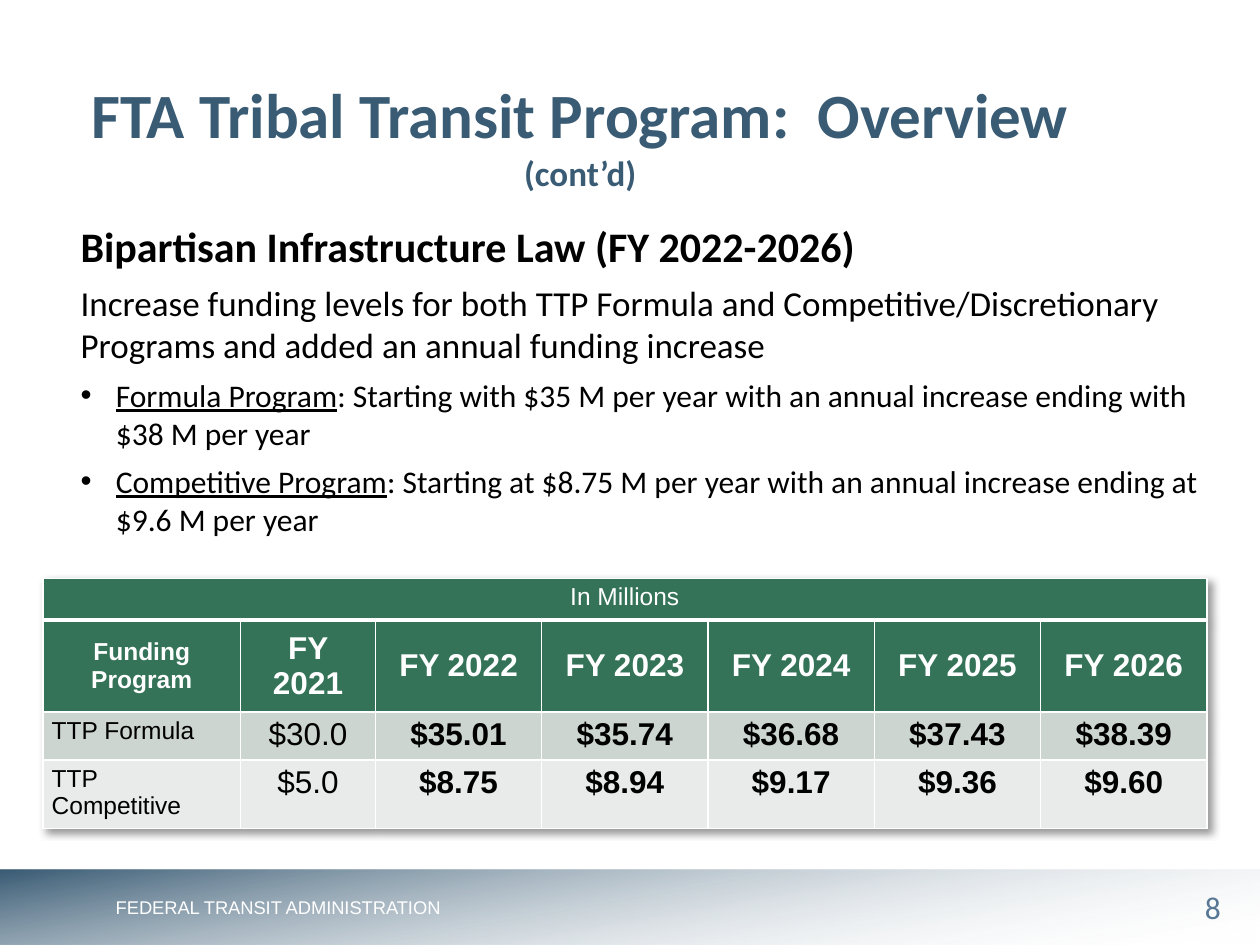
from lxml import etree
from pptx import Presentation
from pptx import util as u
from pptx.dml.color import RGBColor
from pptx.enum import shapes, text
from pptx.oxml import ns

COLORS = {
    "navy": "395B74", "number": "577795", "white": "FFFFFF", "black": "000000",
    "green": "347358", "formula": "CDD5D1", "competitive": "E8EBEA",
}
LEFT, CENTER = text.PP_ALIGN.LEFT, text.PP_ALIGN.CENTER
TOP, MIDDLE = text.MSO_ANCHOR.TOP, text.MSO_ANCHOR.MIDDLE
TIGHT = (0.07, 0.04)


def add_xml(parent, tag, **attributes):
    return etree.SubElement(parent, ns.qn(tag), attributes)


class SlideBuilder:
    def __init__(self, page):
        self.page = page

    def color(self, name):
        return RGBColor.from_string(COLORS[name])

    def style(self, span, size, color="black", bold=False, font="Calibri"):
        span.font.name = font
        span.font.size = u.Pt(size)
        span.font.bold = bold
        span.font.color.rgb = self.color(color)

    def box(self, left, top, width, height, inset=(0.1, 0.05), anchor=TOP, wrap=True):
        frame = self.page.shapes.add_textbox(
            *map(u.Inches, (left, top, width, height))).text_frame
        frame.word_wrap = wrap
        frame.vertical_anchor = anchor
        frame.margin_left = frame.margin_right = u.Inches(inset[0])
        frame.margin_top = frame.margin_bottom = u.Inches(inset[1])
        return frame

    def add_span(self, para, content, size, align=LEFT, **style):
        para.alignment = align
        span = para.add_run()
        span.text = content
        self.style(span, size, **style)
        return span

    def bullet(self, para, indent=0.28):
        properties = para._p.get_or_add_pPr()
        properties.set("marL", str(u.Inches(indent)))
        properties.set("indent", str(u.Inches(-indent)))
        add_xml(properties, "a:buFont", typeface="Arial")
        add_xml(properties, "a:buChar", char="•")

    def footer_band(self, top, height):
        band = self.page.shapes.add_shape(
            shapes.MSO_SHAPE.RECTANGLE, 0, u.Inches(top), u.Inches(10), u.Inches(height))
        band.shadow.inherit = False
        band.line.fill.background()
        band.fill.gradient()
        band.fill.gradient_angle = 280
        start, end = band.fill.gradient_stops
        start.position, end.position = 0, 0.99
        start.color.rgb, end.color.rgb = self.color("navy"), self.color("white")
        fade = band._element.spPr.findall(".//" + ns.qn("a:srgbClr"))[-1]
        add_xml(fade, "a:alpha", val="0")

    def table(self, left, top, widths, heights):
        frame = self.page.shapes.add_table(
            len(heights), len(widths),
            *map(u.Inches, (left, top, sum(widths), sum(heights))))
        table = frame.table
        table.first_row = table.horz_banding = False
        for column, width in zip(table.columns, widths):
            column.width = u.Inches(width)
        for row, height in zip(table.rows, heights):
            row.height = u.Inches(height)
        effects = etree.Element(ns.qn("a:effectLst"))
        shadow = add_xml(effects, "a:outerShdw", blurRad="50800", dist="38100",
                         dir="2700000", algn="tl", rotWithShape="0")
        add_xml(add_xml(shadow, "a:prstClr", val="black"), "a:alpha", val="40000")
        table._tbl.tblPr.insert(0, effects)
        return table

    def cell(self, cell, content, fill, size, align=CENTER, anchor=TOP, bottom=1, **style):
        cell.margin_left = cell.margin_right = u.Inches(TIGHT[0])
        cell.margin_top = cell.margin_bottom = u.Inches(TIGHT[1])
        cell.vertical_anchor = anchor
        cell.fill.solid()
        cell.fill.fore_color.rgb = self.color(fill)
        if content:
            self.add_span(cell.text_frame.paragraphs[0], content, size, align,
                          font="Arial", **style)
        properties = cell._tc.get_or_add_tcPr()
        borders = (("L", 1), ("R", 1), ("T", 1), ("B", bottom))
        for index, (side, width) in enumerate(borders):
            line = etree.Element(ns.qn("a:ln" + side), w=str(u.Pt(width)))
            add_xml(add_xml(line, "a:solidFill"), "a:srgbClr", val=COLORS["white"])
            properties.insert(index, line)


def add_footer(slide):
    slide.footer_band(6.9, 0.6)
    number = slide.box(9.25, 7.01, 0.75, 0.38, TIGHT)
    slide.add_span(number.paragraphs[0], "8", 18, CENTER, color="number")
    agency = slide.box(0.82, 7.06, 2.85, 0.28, wrap=False)
    slide.add_span(agency.paragraphs[0], "FEDERAL TRANSIT ADMINISTRATION", 10.5,
                   color="white", font="Arial")


def add_body(slide):
    title = slide.box(0.34, 0.57, 8.53, 1, anchor=MIDDLE).paragraphs[0]
    for content, size in (("FTA Tribal Transit Program:  Overview ", 36), ("(cont’d)", 20)):
        slide.add_span(title, content, size, CENTER, color="navy", bold=True)

    body = slide.box(0.57, 1.71, 9.03, 2.75, TIGHT)
    heading = body.paragraphs[0]
    slide.add_span(heading, "Bipartisan Infrastructure Law (FY 2022-2026)", 24, bold=True)
    slide.add_span(body.add_paragraph(),
                   "Increase funding levels for both TTP Formula and Competitive/Discretionary "
                   "Programs and added an annual funding increase", 20)
    programs = (
        ("Formula Program",
         ": Starting with $35 M per year with an annual increase ending with $38 M per year"),
        ("Competitive Program",
         ": Starting at $8.75 M per year with an annual increase ending at $9.6 M per year"),
    )
    for name, details in programs:
        para = body.add_paragraph()
        slide.bullet(para)
        slide.add_span(para, name, 18).font.underline = True
        slide.add_span(para, details, 18)
    for para in body.paragraphs:
        para.space_after = u.Pt(6)


def add_funding_table(slide):
    years = [f"FY {year}" for year in range(2021, 2027)]
    funding = (
        ("TTP Formula", "formula", (30.0, 35.01, 35.74, 36.68, 37.43, 38.39)),
        ("TTP Competitive", "competitive", (5.0, 8.75, 8.94, 9.17, 9.36, 9.60)),
    )
    table = slide.table(0.34, 4.59, [1.57, 1.07] + [1.32] * 5, [0.33, 0.73, 0.35, 0.52])
    for column in range(len(years) + 1):
        slide.cell(table.cell(0, column), "" if column else "In Millions", "green", 14,
                   bottom=3, color="white")
    table.cell(0, 0).merge(table.cell(0, len(years)))
    for column, label in enumerate(["Funding Program"] + years):
        slide.cell(table.cell(1, column), label, "green", 18 if column else 14,
                   anchor=MIDDLE, color="white", bold=True)
    for row, (program, fill, amounts) in enumerate(funding, start=2):
        slide.cell(table.cell(row, 0), program, fill, 14, LEFT)
        for column, amount in enumerate(amounts, start=1):
            digits = 1 if column == 1 else 2
            slide.cell(table.cell(row, column), f"${amount:.{digits}f}", fill, 18,
                       bold=column > 1)


def main():
    deck = Presentation()
    deck.slide_width, deck.slide_height = u.Inches(10), u.Inches(7.5)
    slide = SlideBuilder(deck.slides.add_slide(deck.slide_layouts[6]))
    add_footer(slide)
    add_body(slide)
    add_funding_table(slide)
    deck.save("out.pptx")


if __name__ == "__main__":
    main()
